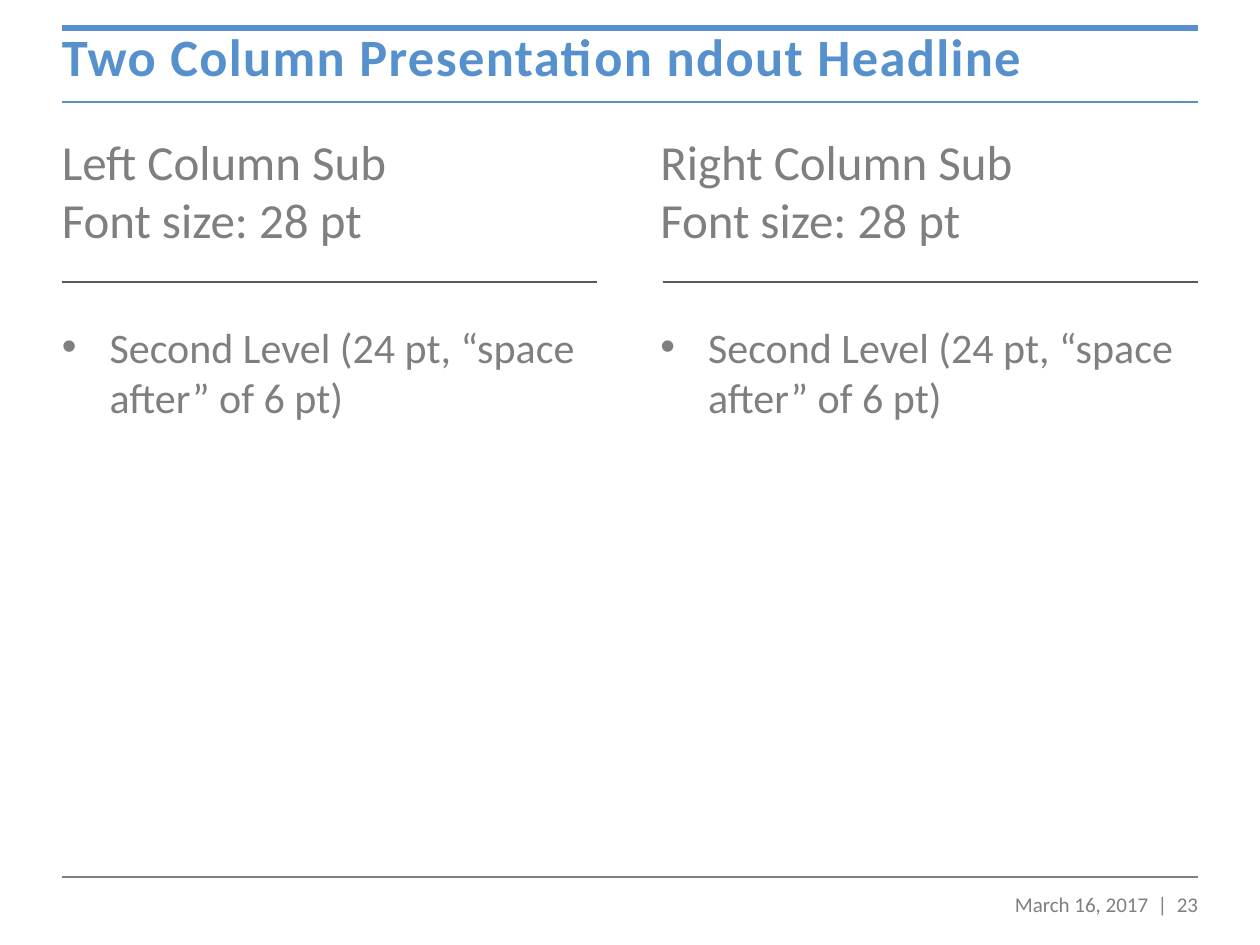
"""Build a two-column slide with a ruled headline and a dated footer."""
from lxml import etree
from pptx import Presentation
from pptx import util as u
from pptx.dml.color import RGBColor
from pptx.enum import shapes, text
from pptx.oxml.ns import qn

HEADLINE = "Two Column Presentation ndout Headline"
COLUMNS = [
    ("Left Column Sub\vFont size: 28 pt", "Second Level (24 pt, “space after” of 6 pt)", 0.39, 4.35),
    ("Right Column Sub\vFont size: 28 pt", "Second Level (24 pt, “space after” of 6 pt)", 5.14, 4.49),
]
FOOTER = "March 16, 2017  |  23"

BLUE, GREY = "5691CE", "7F7F7F"
LEFT, RIGHT, COLUMN_RULE = 0.49, 9.51, 4.25
RULES = [
    (LEFT, RIGHT, 0.81, BLUE, 1),
    (LEFT, RIGHT, 0.22, BLUE, 3.5),
    (LEFT, LEFT + COLUMN_RULE, 2.24, "595959", 1),
    (RIGHT - COLUMN_RULE, RIGHT, 2.24, "595959", 1),
    (LEFT, RIGHT, 6.96, "808080", 1),
]

TOP, MIDDLE = text.MSO_ANCHOR.TOP, text.MSO_ANCHOR.MIDDLE
HEADLINE_PARAGRAPH = {"alignment": text.PP_ALIGN.LEFT, "line_spacing": 0.9}
SUB_PARAGRAPH = {"space_before": u.Pt(0), "space_after": u.Pt(6)}
BULLET_PARAGRAPH = {"space_before": u.Pt(35.3), "space_after": u.Pt(6)}
FOOTER_PARAGRAPH = {"alignment": text.PP_ALIGN.RIGHT}


def colour(hex_value):
    return RGBColor.from_string(hex_value)


def assign(target, values):
    for key, value in values.items():
        setattr(target, key, value)


def place(holder, left, top, width, height, anchor=TOP):
    assign(holder, {"left": u.Inches(left), "top": u.Inches(top),
                    "width": u.Inches(width), "height": u.Inches(height)})
    assign(holder.text_frame, {"word_wrap": True, "vertical_anchor": anchor,
                               "auto_size": text.MSO_AUTO_SIZE.NONE})
    return holder.text_frame


def write(paragraph, wording, size, layout, hex_value=GREY, bold=False):
    paragraph.text = wording
    assign(paragraph, layout)
    for run in paragraph.runs:
        assign(run.font, {"name": "Calibri", "size": u.Pt(size), "bold": bold})
        run.font.color.rgb = colour(hex_value)


def set_bullet(paragraph, indent, mark=None):
    properties = paragraph._p.get_or_add_pPr()
    properties.set("marL", str(u.Inches(indent)))
    properties.set("indent", str(-u.Inches(indent)))
    if mark:
        etree.SubElement(properties, qn("a:buFont"), typeface="Arial")
        etree.SubElement(properties, qn("a:buChar"), char=mark)
    else:
        etree.SubElement(properties, qn("a:buNone"))


def draw_rule(slide, start, end, height, hex_value, weight):
    rule = slide.shapes.add_connector(
        shapes.MSO_CONNECTOR.STRAIGHT,
        u.Inches(start), u.Inches(height), u.Inches(end), u.Inches(height))
    rule.line.color.rgb = colour(hex_value)
    rule.line.width = u.Pt(weight)
    etree.SubElement(rule._element.spPr, qn("a:effectLst"))


def main():
    deck = Presentation()
    assign(deck, {"slide_width": u.Inches(10), "slide_height": u.Inches(7.5)})
    slide = deck.slides.add_slide(deck.slide_layouts.get_by_name("Two Content"))
    title, *bodies = slide.placeholders

    headline = place(title, 0.39, 0.21, 9.12, 0.53, MIDDLE).paragraphs[0]
    write(headline, HEADLINE, 30, HEADLINE_PARAGRAPH, BLUE, True)
    headline.runs[0].font._element.set("spc", "80")

    for body, (sub, point, left, width) in zip(bodies, COLUMNS):
        frame = place(body, left, 0.99, width, 5.84)
        write(frame.paragraphs[0], sub, 28, SUB_PARAGRAPH)
        set_bullet(frame.paragraphs[0], 0)
        second_level = frame.add_paragraph()
        write(second_level, point, 24, BULLET_PARAGRAPH)
        set_bullet(second_level, 0.38, "•")

    for rule in RULES:
        draw_rule(slide, *rule)

    footer = slide.shapes.add_textbox(0, 0, 0, 0)
    write(place(footer, 7.71, 7.03, 1.9, 0.38).paragraphs[0], FOOTER, 12, FOOTER_PARAGRAPH)

    deck.save("out.pptx")


if __name__ == "__main__":
    main()
